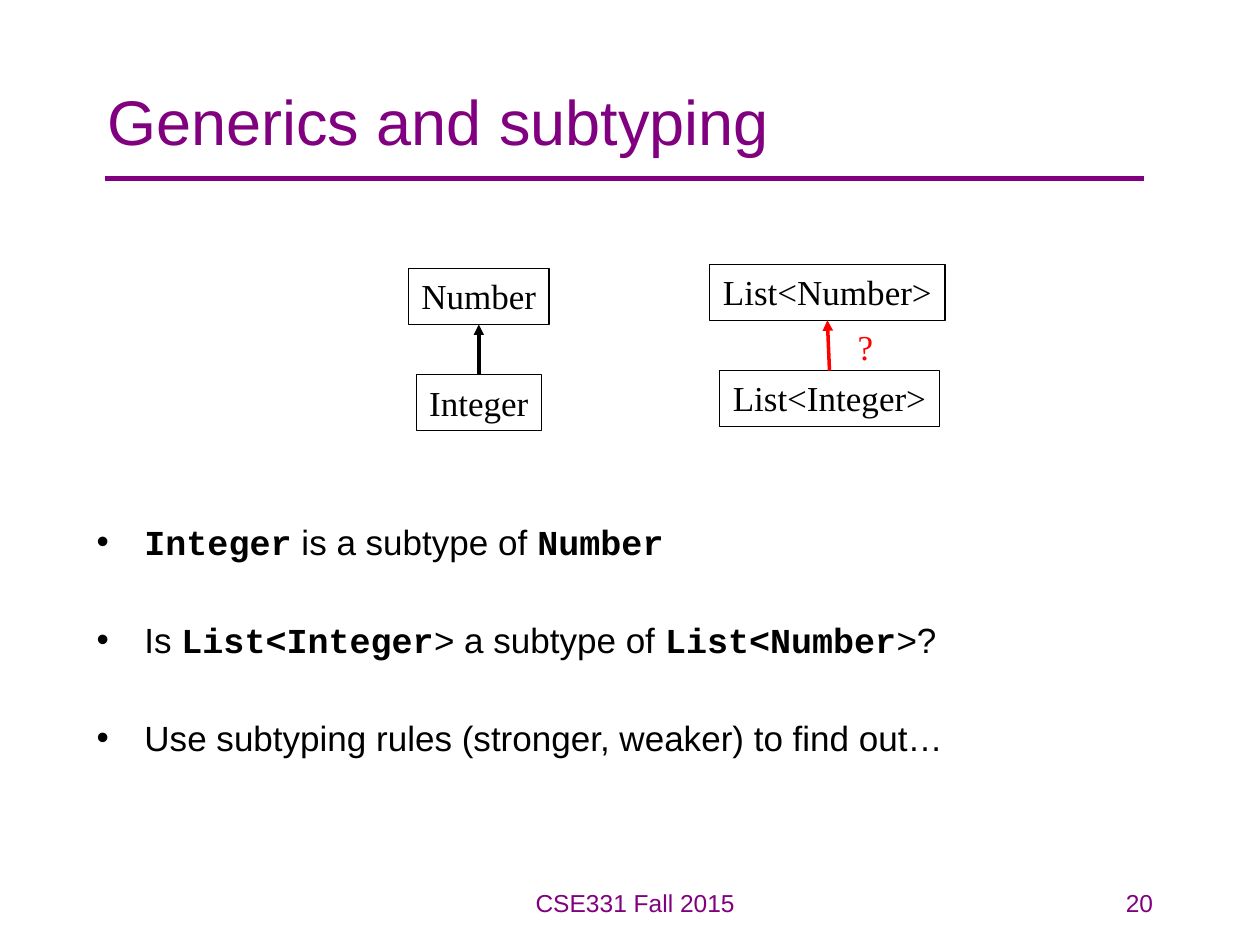
from lxml import etree
from pptx import Presentation
from pptx.dml.color import RGBColor
from pptx.enum.shapes import MSO_CONNECTOR, MSO_SHAPE
from pptx.enum.text import MSO_ANCHOR, MSO_AUTO_SIZE, PP_ALIGN
from pptx.oxml.ns import qn
from pptx.util import Inches, Pt

STRAIGHT = MSO_CONNECTOR.STRAIGHT
RECTANGLE = MSO_SHAPE.RECTANGLE
MIDDLE = MSO_ANCHOR.MIDDLE
TOP_ANCHOR = MSO_ANCHOR.TOP
NO_FIT = MSO_AUTO_SIZE.NONE
GROW = MSO_AUTO_SIZE.SHAPE_TO_FIT_TEXT
LEFT, CENTER, RIGHT = PP_ALIGN.LEFT, PP_ALIGN.CENTER, PP_ALIGN.RIGHT

UNITS_PER_INCH = 12
BOX_ROWS = 5.3
BOX_PITCH = 10.1
TOP_SIDE, BOTTOM_SIDE = 0, 2
PURPLE, BLACK, RED = "800080", "000000", "FF0000"
SANS, MONO, SERIF = "Arial", "Courier New", "Times New Roman"

POINTS = [
    [("Integer", True), (" is a subtype of ", False), ("Number", True)],
    [("Is ", False), ("List<Integer", True), ("> a subtype of ", False),
     ("List<Number", True), (">?", False)],
    [("Use subtyping rules (stronger, weaker) to find out…", False)],
]


def color(hex_string):
    return RGBColor.from_string(hex_string)


def grid(*units):
    return [Inches(unit / UNITS_PER_INCH) for unit in units]


def place(element, *units):
    element.left, element.top, element.width, element.height = grid(*units)


def add_run(paragraph, text, size, font, ink, bold=False):
    run = paragraph.add_run()
    run.text = text
    run.font.size = Pt(size)
    run.font.name = font
    run.font.bold = bold
    run.font.color.rgb = color(ink)


def add_line(slide, start, end, ink, weight):
    line = slide.shapes.add_connector(STRAIGHT, *grid(*start, *end))
    line.line.color.rgb = color(ink)
    line.line.width = Pt(weight)
    etree.SubElement(line._element.spPr, qn("a:effectLst"))
    return line


def add_title(slide, text):
    title = slide.shapes.title
    place(title, 9, 4, 102, 15)
    title.text_frame.vertical_anchor = MIDDLE
    title.text_frame.auto_size = NO_FIT
    heading = title.text_frame.paragraphs[0]
    heading.alignment = LEFT
    add_run(heading, text, 36, SANS, PURPLE)


def add_points(slide, points):
    body = slide.placeholders[1]
    place(body, 8, 49, 109, 27)
    frame = body.text_frame
    frame.auto_size = NO_FIT
    frame.vertical_anchor = TOP_ANCHOR
    for index, pieces in enumerate(points):
        point = frame.add_paragraph() if index else frame.paragraphs[0]
        point.space_before = Pt(32 if index else 2)
        properties = point._p.get_or_add_pPr()
        properties.set("marL", str(Inches(0.38)))
        properties.set("indent", str(-Inches(0.38)))
        etree.SubElement(properties, qn("a:buChar"), char="•")
        for text, is_code in pieces:
            add_run(point, text, 20, MONO if is_code else SANS, BLACK, is_code)


def add_type_box(slide, name, center, top, columns):
    box = slide.shapes.add_shape(
        RECTANGLE, *grid(center - columns / 2, top, columns, BOX_ROWS))
    box.shadow.inherit = False
    box.fill.background()
    box.line.color.rgb = color(BLACK)
    box.line.width = Pt(0.75)
    frame = box.text_frame
    frame.word_wrap = False
    frame.auto_size = GROW
    frame.vertical_anchor = TOP_ANCHOR
    frame.paragraphs[0].alignment = CENTER
    add_run(frame.paragraphs[0], name, 20, SERIF, BLACK)
    return box


def add_subtype_arrow(slide, subtype, supertype, ink):
    arrow = add_line(slide, (0, 0), (0, 0), ink, 2)
    arrow.begin_connect(subtype, TOP_SIDE)
    arrow.end_connect(supertype, BOTTOM_SIDE)
    etree.SubElement(arrow.line._get_or_add_ln(), qn("a:tailEnd"), type="triangle")


def add_hierarchy(slide, top, supertype, subtype, ink):
    upper = add_type_box(slide, supertype[0], supertype[1], top, supertype[2])
    lower = add_type_box(slide, subtype[0], subtype[1], top + BOX_PITCH, subtype[2])
    add_subtype_arrow(slide, lower, upper, ink)


def add_label(slide, text, units, size, font, ink, alignment, wrap=True):
    label = slide.shapes.add_textbox(*grid(*units))
    label.text_frame.word_wrap = wrap
    label.text_frame.paragraphs[0].alignment = alignment
    add_run(label.text_frame.paragraphs[0], text, size, font, ink)


def main():
    deck = Presentation()
    deck.slide_width, deck.slide_height = Inches(10), Inches(7.5)
    slide = deck.slides.add_slide(deck.slide_layouts[1])
    add_line(slide, (10, 17), (109, 17), PURPLE, 3)
    add_title(slide, "Generics and subtyping")
    add_points(slide, POINTS)
    add_hierarchy(slide, 25.6, ("Number", 45.6, 13.4), ("Integer", 45.6, 11.9), BLACK)
    add_hierarchy(slide, 25.2, ("List<Number>", 78.8, 22.4),
                  ("List<Integer>", 79, 20.9), RED)
    add_label(slide, "?", (80.5, 30.4, 4, BOX_ROWS), 20, SERIF, RED, LEFT, wrap=False)
    add_label(slide, "20", (86, 84, 25, 6), 14, SANS, PURPLE, RIGHT)
    add_label(slide, "CSE331 Fall 2015", (38, 84, 45, 6), 14, SANS, PURPLE, CENTER)
    deck.save("out.pptx")


if __name__ == "__main__":
    main()
